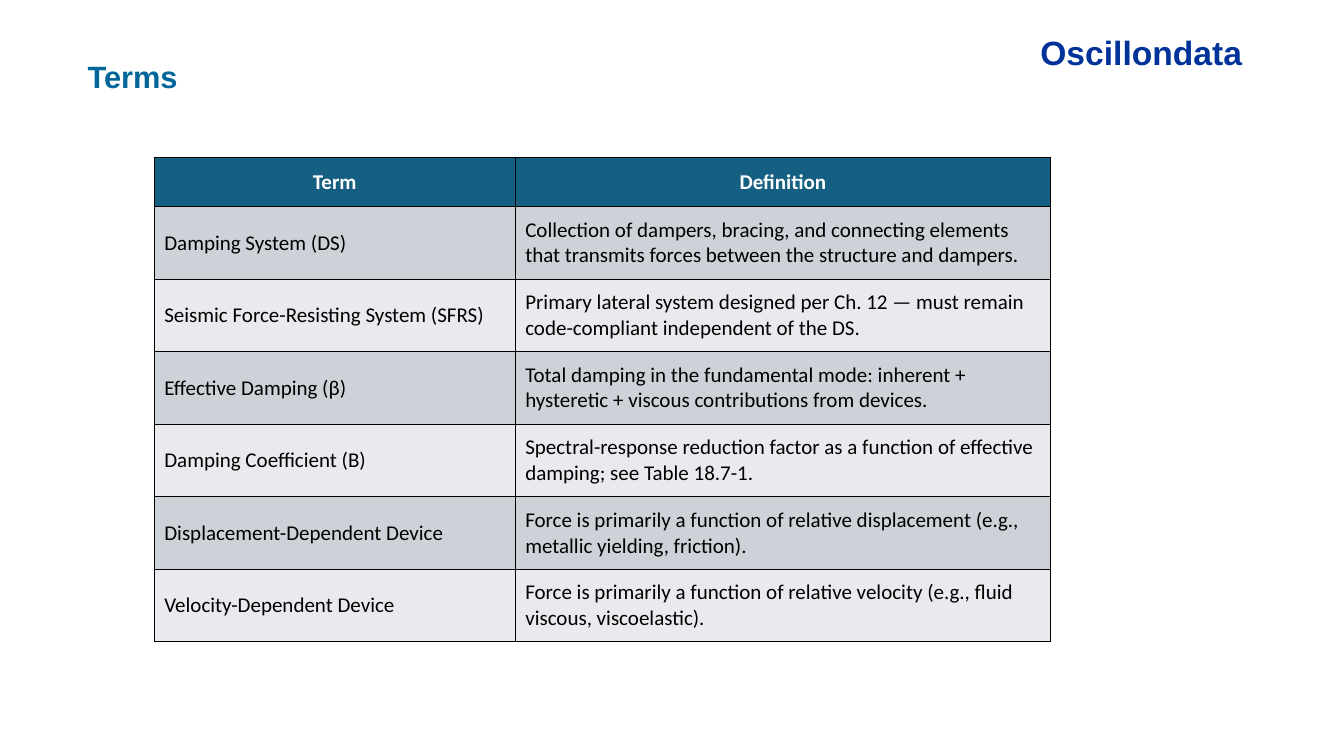
from lxml.etree import SubElement
from pptx import Presentation
from pptx.dml.color import RGBColor
from pptx.enum.text import MSO_ANCHOR, MSO_AUTO_SIZE, PP_ALIGN
from pptx.oxml.ns import qn
from pptx.util import Inches, Pt

COLORS = {
    "brand": "003399",
    "title": "006699",
    "header": "156082",
    "header_text": "FFFFFF",
    "odd_row": "CCD2D8",
    "even_row": "E8EAED",
    "text": "000000",
    "border": "000000",
}

COLUMN_WIDTHS = (3.58, 5.31)
HEADER_HEIGHT = 0.49
ROW_HEIGHT = 0.72

HEADER = ("Term", "Definition")
TERMS = [
    ("Damping System (DS)",
     "Collection of dampers, bracing, and connecting elements that transmits "
     "forces between the structure and dampers."),
    ("Seismic Force-Resisting System (SFRS)",
     "Primary lateral system designed per Ch. 12 — must remain code-compliant "
     "independent of the DS."),
    ("Effective Damping (β)",
     "Total damping in the fundamental mode: inherent + hysteretic + viscous "
     "contributions from devices."),
    ("Damping Coefficient (B)",
     "Spectral-response reduction factor as a function of effective damping; "
     "see Table 18.7-1."),
    ("Displacement-Dependent Device",
     "Force is primarily a function of relative displacement (e.g., metallic "
     "yielding, friction)."),
    ("Velocity-Dependent Device",
     "Force is primarily a function of relative velocity (e.g., fluid viscous, "
     "viscoelastic)."),
]


def color(name):
    """Return the named colour."""
    return RGBColor.from_string(COLORS[name])


def style_font(paragraph, name, size, color_name, bold):
    """Set the font of a whole paragraph."""
    font = paragraph.font
    font.name = name
    font.size = Pt(size)
    font.bold = bold
    font.color.rgb = color(color_name)


def add_heading(slide, text, left, top, width, height, size, color_name):
    """Add a bold one-line heading that grows with its text."""
    box = slide.shapes.add_textbox(
        Inches(left), Inches(top), Inches(width), Inches(height))
    frame = box.text_frame
    frame.word_wrap = False
    frame.auto_size = MSO_AUTO_SIZE.SHAPE_TO_FIT_TEXT
    frame.text = text
    style_font(frame.paragraphs[0], "Arial", size, color_name, True)


def add_borders(cell):
    """Draw a one-point line on each side of a cell."""
    properties = cell._tc.get_or_add_tcPr()
    for position, side in enumerate(("lnL", "lnR", "lnT", "lnB")):
        line = SubElement(properties, qn(f"a:{side}"), w=str(Pt(1)))
        fill = SubElement(line, qn("a:solidFill"))
        SubElement(fill, qn("a:srgbClr"), val=COLORS["border"])
        properties.insert(position, line)


def fill_cell(cell, text, fill_name, is_header):
    """Write and style one table cell."""
    cell.text = text
    cell.vertical_anchor = MSO_ANCHOR.MIDDLE
    cell.fill.solid()
    cell.fill.fore_color.rgb = color(fill_name)
    paragraph = cell.text_frame.paragraphs[0]
    paragraph.alignment = PP_ALIGN.CENTER if is_header else PP_ALIGN.LEFT
    text_color = "header_text" if is_header else "text"
    style_font(paragraph, "Calibri", 15, text_color, is_header)
    add_borders(cell)


def add_terms_table(slide, left, top):
    """Add the table of terms with alternating row fills."""
    rows = [HEADER, *TERMS]
    height = HEADER_HEIGHT + ROW_HEIGHT * len(TERMS)
    table = slide.shapes.add_table(
        len(rows), len(HEADER), Inches(left), Inches(top),
        Inches(sum(COLUMN_WIDTHS)), Inches(height)).table
    for column, width in zip(table.columns, COLUMN_WIDTHS):
        column.width = Inches(width)
    for index, texts in enumerate(rows):
        is_header = index == 0
        table.rows[index].height = Inches(HEADER_HEIGHT if is_header else ROW_HEIGHT)
        band = "odd_row" if index % 2 else "even_row"
        fill_name = "header" if is_header else band
        for cell, text in zip(table.rows[index].cells, texts):
            fill_cell(cell, text, fill_name, is_header)


def main():
    """Build the terms slide and save the deck."""
    deck = Presentation()
    deck.slide_width = Inches(13.33)
    deck.slide_height = Inches(7.5)
    slide = deck.slides.add_slide(deck.slide_layouts[6])
    add_heading(slide, "Oscillondata", 10.22, 0.27, 2.35, 0.5, 24, "brand")
    add_heading(slide, "Terms", 0.77, 0.52, 1.1, 0.47, 22, "title")
    add_terms_table(slide, 1.53, 1.56)
    deck.save("out.pptx")


if __name__ == "__main__":
    main()
